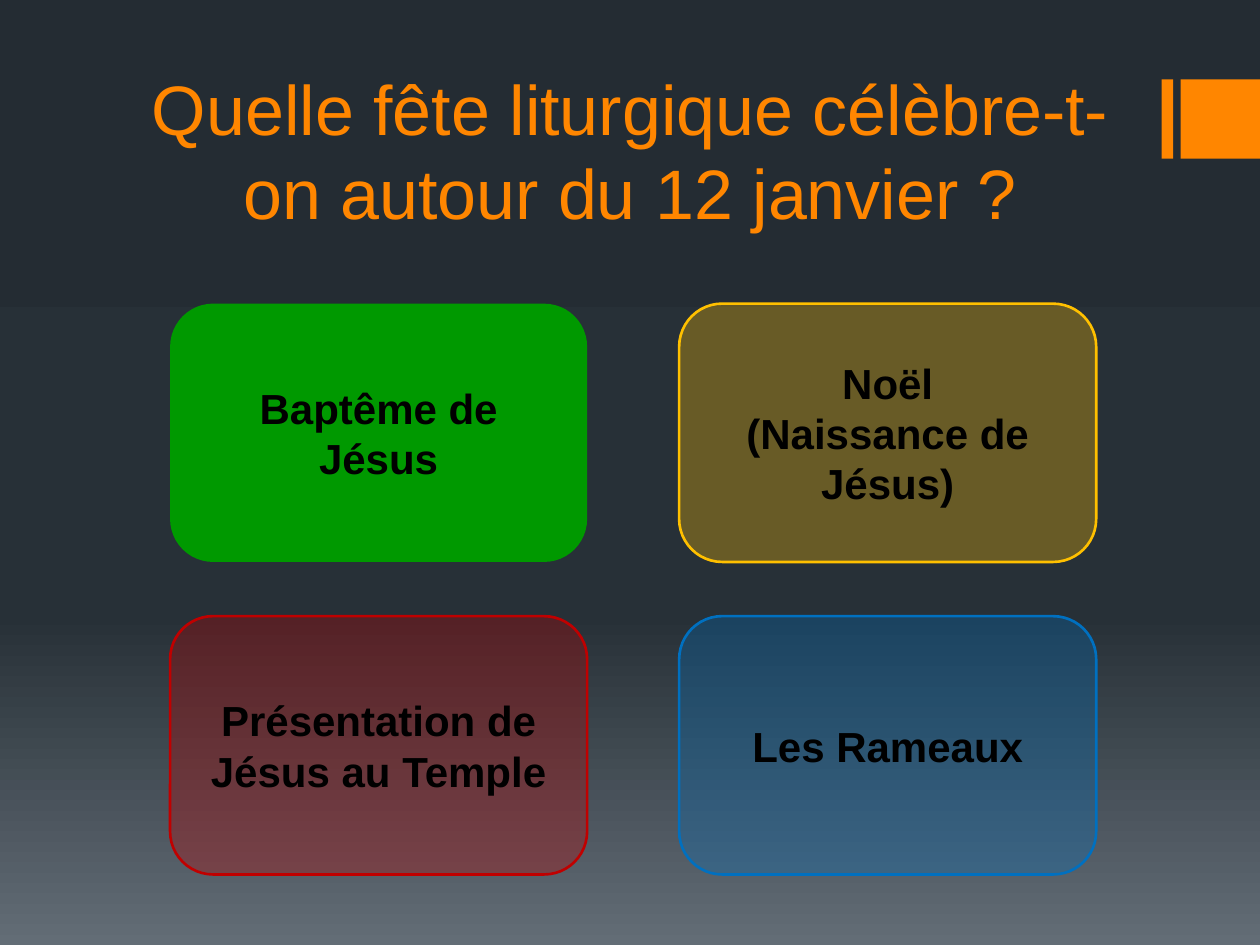
from copy import deepcopy

from lxml.etree import SubElement
from pptx import Presentation
from pptx.dml.color import RGBColor
from pptx.enum.shapes import MSO_SHAPE as SHAPE
from pptx.enum.text import MSO_ANCHOR as ANCHOR, PP_ALIGN as ALIGN
from pptx.oxml.ns import qn
from pptx.util import Inches, Pt

WIDTH, HEIGHT = 10, 7.5
ORANGE = "FF8600"
BACKGROUND = [(0, "242C33"), (0.65, "273037"), (1, "636D76")]
TITLE_FONT = {"name": "Arial", "size": Pt(40), "bold": False}
ANSWER_FONT = {"name": "Arial", "size": Pt(24), "bold": True}

QUESTION = "Quelle fête liturgique célèbre-t-on autour du 12 janvier ?"
# Lines of text, colour, whether it is the right answer
ANSWERS = [
    (["Baptême de Jésus"], "009900", True),
    (["Noël", "(Naissance de Jésus)"], "FFC000", False),
    (["Présentation de Jésus au Temple"], "C00000", False),
    (["Les Rameaux"], "0070C0", False),
]


def rgb(color):
    return RGBColor.from_string(color)


def inches(box):
    return [Inches(v) for v in box]


def write(sp, lines, font, color):
    """Centre one paragraph per line in the shape."""
    tf = sp.text_frame
    tf.word_wrap = True
    tf.vertical_anchor = ANCHOR.MIDDLE
    for i, line in enumerate(lines):
        p = tf.paragraphs[0] if i == 0 else tf.add_paragraph()
        p.alignment = ALIGN.CENTER
        r = p.add_run()
        r.text = line
        for key, value in font.items():
            setattr(r.font, key, value)
        r.font.color.rgb = rgb(color)


def add_filled(s, kind, box, color):
    sp = s.shapes.add_shape(kind, *inches(box))
    sp.shadow.inherit = False
    sp.fill.solid()
    sp.fill.fore_color.rgb = rgb(color)
    sp.line.fill.background()
    return sp


def paint_background(s, stops):
    fill = s.background.fill
    fill.gradient()
    fill.gradient_angle = 270
    gs_list = next(s.element.iter(qn("a:gsLst")))
    while len(gs_list) < len(stops):
        gs_list.append(deepcopy(gs_list[0]))
    for stop, (position, color) in zip(fill.gradient_stops, stops):
        stop.position = position
        stop.color.rgb = rgb(color)


def add_corner_mark(s, box):
    """A thin bar, a gap and a square that fills the rest of the box."""
    left, top, width, height = box
    bar = width - height - 0.06
    add_filled(s, SHAPE.RECTANGLE, (left, top, bar, height), ORANGE)
    add_filled(s, SHAPE.RECTANGLE, (left + width - height, top, height, height), ORANGE)


def add_title(s, box):
    write(s.shapes.add_textbox(*inches(box)), [QUESTION], TITLE_FONT, ORANGE)


def add_answer(s, box, lines, color, correct):
    sp = add_filled(s, SHAPE.ROUNDED_RECTANGLE, box, color)
    if not correct:
        clr = next(sp.element.spPr.iter(qn("a:srgbClr")))
        SubElement(clr, qn("a:alpha"), val="30000")
        sp.line.color.rgb = rgb(color)
        sp.line.width = Pt(1.5)
    write(sp, lines, ANSWER_FONT, "000000")


def add_answers(s, box, gap_x, gap_y, columns=2):
    left, top, width, height = box
    rows = len(ANSWERS) // columns
    w = (width - gap_x * (columns - 1)) / columns
    h = (height - gap_y * (rows - 1)) / rows
    for i, answer in enumerate(ANSWERS):
        row, col = divmod(i, columns)
        cell = (left + col * (w + gap_x), top + row * (h + gap_y), w, h)
        add_answer(s, cell, *answer)


def main():
    prs = Presentation()
    prs.slide_width, prs.slide_height = inches((WIDTH, HEIGHT))
    s = prs.slides.add_slide(prs.slide_layouts[6])
    paint_background(s, BACKGROUND)
    add_corner_mark(s, (9.22, 0.63, WIDTH - 9.22, 0.63))
    add_title(s, (0.1 * WIDTH, 0.36, 0.8 * WIDTH, 0.22 * HEIGHT))
    add_answers(s, (1.35, 2.41, 7.35, 4.53), gap_x=0.73, gap_y=0.43)
    prs.save("out.pptx")


if __name__ == "__main__":
    main()
